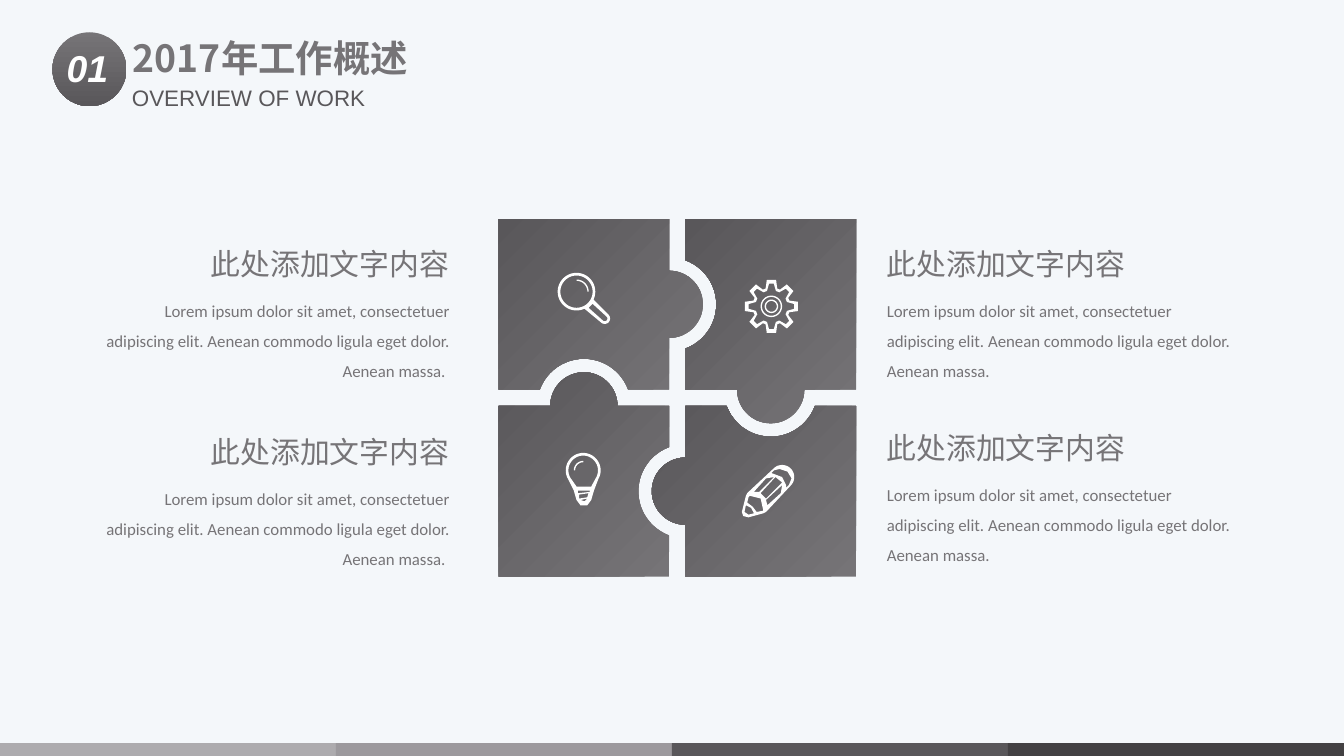
import math

import lxml.etree
import pptx
import pptx.dml.color
import pptx.enum.shapes
import pptx.enum.text
import pptx.oxml.ns
import pptx.util

Inches = pptx.util.Inches
ALIGN = pptx.enum.text.PP_ALIGN
SHAPE = pptx.enum.shapes.MSO_SHAPE

CJK_FONT = "Noto Sans CJK SC"
GREYS = ("767477", "59575A")
HEADING = "此处添加文字内容"
BODY = ("Lorem ipsum dolor sit amet, consectetuer adipiscing elit. "
        "Aenean commodo ligula eget dolor. Aenean massa.")


def color(hex_code):
    return pptx.dml.color.RGBColor.from_string(hex_code)


def paint(fill, paint_colors, angle=270):
    """Fill with one hex colour, or with a gradient between a pair of them."""
    if isinstance(paint_colors, str):
        fill.solid()
        fill.fore_color.rgb = color(paint_colors)
        return
    fill.gradient()
    fill.gradient_angle = angle
    for stop, hex_code in zip(fill.gradient_stops, paint_colors):
        stop.color.rgb = color(hex_code)


def finish(shape, paint_colors, angle=270):
    shape.shadow.inherit = False
    shape.line.fill.background()
    paint(shape.fill, paint_colors, angle)


def add_text(page, box, text, size, font, paint_colors, align=ALIGN.LEFT,
             bold=False, italic=False, wrap=True, spacing=None):
    frame = page.shapes.add_textbox(*map(Inches, box)).text_frame
    frame.word_wrap = wrap
    frame.auto_size = pptx.enum.text.MSO_AUTO_SIZE.SHAPE_TO_FIT_TEXT
    para = frame.paragraphs[0]
    para.text = text
    para.alignment = align
    para.line_spacing = spacing
    para.font.size = pptx.util.Pt(size)
    para.font.bold = bold
    para.font.italic = italic
    para.font.name = font
    paint(para.font.fill, paint_colors)
    qn = pptx.oxml.ns.qn
    properties = para._p.pPr.find(qn("a:defRPr"))
    lxml.etree.SubElement(properties, qn("a:ea")).set("typeface", font)


def arc(x, y, radius, start, end):
    """Points along an arc; degrees run clockwise from the right."""
    steps = max(2, math.ceil(abs(end - start) / 6))
    angles = [math.radians(start + (end - start) * i / steps) for i in range(steps + 1)]
    return [(x + radius * math.cos(a), y + radius * math.sin(a)) for a in angles]


def add_outline(page, origin, contours, paint_colors, angle=270):
    """Draw closed contours, in inches from origin; inner ones are holes."""
    left, top = origin
    builder = None
    for contour in contours:
        points = [(Inches(left + x), Inches(top + y)) for x, y in contour]
        if builder is None:
            builder = page.shapes.build_freeform(*points[0], scale=1.0)
        else:
            builder.move_to(*points[0])
        builder.add_line_segments(points[1:], close=True)
    finish(builder.convert_to_shape(), paint_colors, angle)


def add_icon(page, origin, *contours):
    add_outline(page, origin, contours, "FFFFFF")


def add_footer(page, left, top, width, height):
    shades = ("ADABAE", "9C999D", "59575A", "434143")
    step = width / len(shades)
    for i, shade in enumerate(shades):
        bar = page.shapes.add_shape(
            SHAPE.RECTANGLE, *map(Inches, (left + i * step, top, step, height)))
        finish(bar, shade)


def add_header(page, left, top):
    add_text(page, (left + 0.5, top - 0.03, 2.69, 0.44), "2017年工作概述",
             20, CJK_FONT, GREYS, bold=True)
    add_text(page, (left + 0.45, top + 0.34, 2.02, 0.3), "OVERVIEW OF WORK",
             12, "Arial", GREYS[1], ALIGN.CENTER)
    badge = page.shapes.add_shape(SHAPE.OVAL, *map(Inches, (left, top, 0.55, 0.55)))
    finish(badge, GREYS)
    add_text(page, (left - 0.11, top + 0.05, 0.74, 0.44), "01",
             20, "Arial", "FFFFFF", ALIGN.CENTER, bold=True, italic=True)


def add_puzzle(page, center):
    """Four pieces: the top left one, turned by quarters about the center."""
    outer, inner = 1.33, 0.06
    middle = (outer + inner) / 2
    knob, socket = 0.25, 0.35
    dip = math.degrees(math.asin(2 * inner / socket))
    piece = [(-outer, -outer), (-inner, -outer),
             *arc(-inner, -middle, knob, -90, 90), (-inner, -inner),
             *arc(-middle, inner, socket, -dip, dip - 180), (-outer, -inner)]
    turned = [piece]
    for _ in range(3):
        turned.append([(-y, x) for x, y in turned[-1]])
    for contour in turned[1:] + turned[:1]:
        add_outline(page, center, [contour], GREYS, 135)


def add_caption(page, left, top, align):
    width, heading_width = 2.82, 2
    is_right = align == ALIGN.RIGHT
    heading_left = left + width - heading_width if is_right else left
    add_text(page, (left, top + 0.33, width, 0.78), BODY + (" " if is_right else ""),
             9, "Calibri", GREYS, align, spacing=1.5)
    add_text(page, (heading_left, top, heading_width, 0.37), HEADING,
             16, CJK_FONT, GREYS, align, wrap=False)


def add_pencil(page, origin):
    body = arc(0.3, 0.09, 0.09, -135, 45) + [
        (0.18, 0.35), (0.16, 0.36), (0.05, 0.39), (0.01, 0.38),
        (0, 0.35), (0.03, 0.23), (0.04, 0.21)]
    eraser = [(0.35, 0.15), (0.33, 0.17), (0.33, 0.15), (0.3, 0.09), (0.22, 0.06),
              (0.24, 0.04), (0.28, 0.03), (0.34, 0.05), (0.37, 0.1)]
    wood = [(0.11, 0.35), (0.08, 0.31), (0.04, 0.28), (0.05, 0.24),
            (0.06, 0.23), (0.14, 0.25), (0.16, 0.34)]
    lead = [(0.05, 0.37), (0.02, 0.35), (0.03, 0.3), (0.07, 0.32), (0.09, 0.36)]
    stripes = ([(0.09, 0.2), (0.18, 0.1), (0.24, 0.09), (0.13, 0.2)],
               [(0.18, 0.25), (0.14, 0.21), (0.25, 0.09), (0.3, 0.13)],
               [(0.19, 0.3), (0.18, 0.26), (0.3, 0.15), (0.29, 0.21)])
    add_icon(page, origin, body, eraser, wood, lead, *stripes)


def add_glint(page, origin, x, y, radius, start):
    add_icon(page, origin, arc(x, y, radius, start, start + 90)
             + arc(x, y, radius - 0.01, start + 90, start))


def add_bulb(page, origin):
    x, y = 0.13, 0.13
    shell = arc(x, y, 0.13, 150, 390) + [
        (0.21, 0.28), (0.19, 0.35), (0.16, 0.39), (0.11, 0.39), (0.08, 0.35), (0.06, 0.28)]
    glass = arc(x, y, 0.11, 150, 390) + [(0.19, 0.25), (0.08, 0.25)]
    threads = ([(0.09, 0.28), (0.18, 0.28), (0.18, 0.29), (0.09, 0.3)],
               [(0.1, 0.31), (0.17, 0.3), (0.16, 0.33), (0.1, 0.34)],
               [(0.11, 0.35), (0.16, 0.34), (0.14, 0.36)])
    add_icon(page, origin, shell, glass, *threads)
    add_glint(page, origin, x, y, 0.07, 180)


def add_gear(page, center):
    def rim(tooth):
        return [arc(0, 0, radius, 45 * i + offset, 0)[0]
                for i in range(8) for offset, radius in tooth]

    add_icon(page, center,
             rim([(-18, 0.14), (-10, 0.2), (10, 0.2), (18, 0.14)]),
             rim([(-16, 0.12), (-6, 0.17), (6, 0.17), (16, 0.12)]))
    for radius in (0.08, 0.05):
        add_icon(page, center, arc(0, 0, radius, 0, 360), arc(0, 0, radius - 0.01, 360, 0))


def add_magnifier(page, origin):
    x, y = 0.14, 0.15
    add_icon(page, origin,
             arc(x, y, 0.14, 65, 385) + arc(0.35, 0.35, 0.04, -45, 135),
             arc(x, y, 0.12, 360, 0),
             [(0.26, 0.24), *arc(0.35, 0.35, 0.02, -45, 135), (0.23, 0.27)])
    add_glint(page, origin, x, y, 0.09, -90)


def main():
    deck = pptx.Presentation()
    deck.slide_width = Inches(10)
    deck.slide_height = deck.slide_width * 9 // 16
    page = deck.slides.add_slide(deck.slide_layouts[6])
    paint(page.background.fill, ("F4F7FA", "F2F6F9"), 135)
    add_footer(page, 0, 5.53, 10, 0.1)
    add_header(page, 0.39, 0.24)
    add_puzzle(page, (5.04, 2.96))
    for left, top, align in ((6.5, 1.78, ALIGN.LEFT), (6.5, 3.15, ALIGN.LEFT),
                             (0.62, 3.18, ALIGN.RIGHT), (0.62, 1.78, ALIGN.RIGHT)):
        add_caption(page, left, top, align)
    add_pencil(page, (5.52, 3.46))
    add_bulb(page, (4.21, 3.37))
    add_gear(page, (5.74, 2.28))
    add_magnifier(page, (4.15, 2.02))
    deck.save("out.pptx")


if __name__ == "__main__":
    main()
